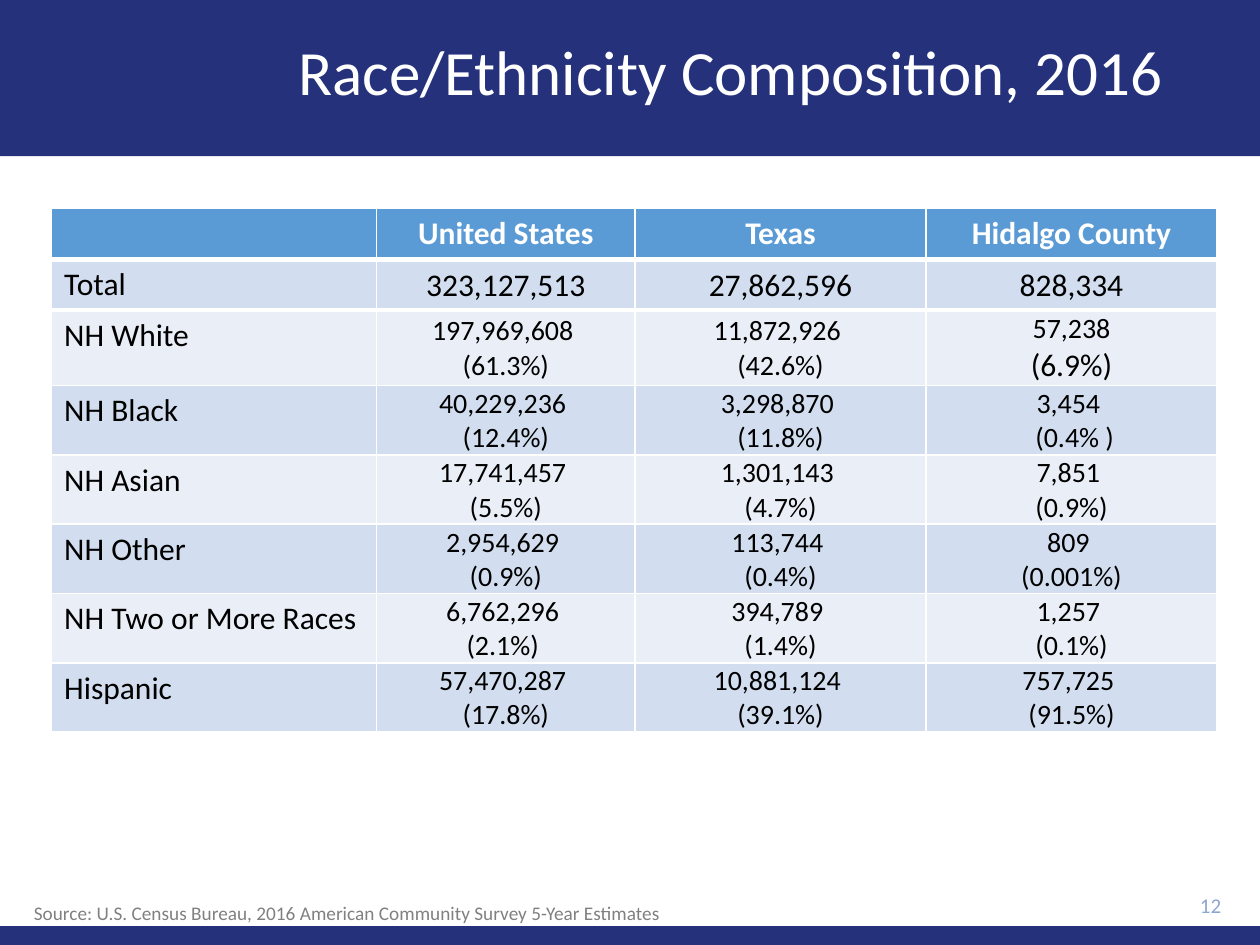
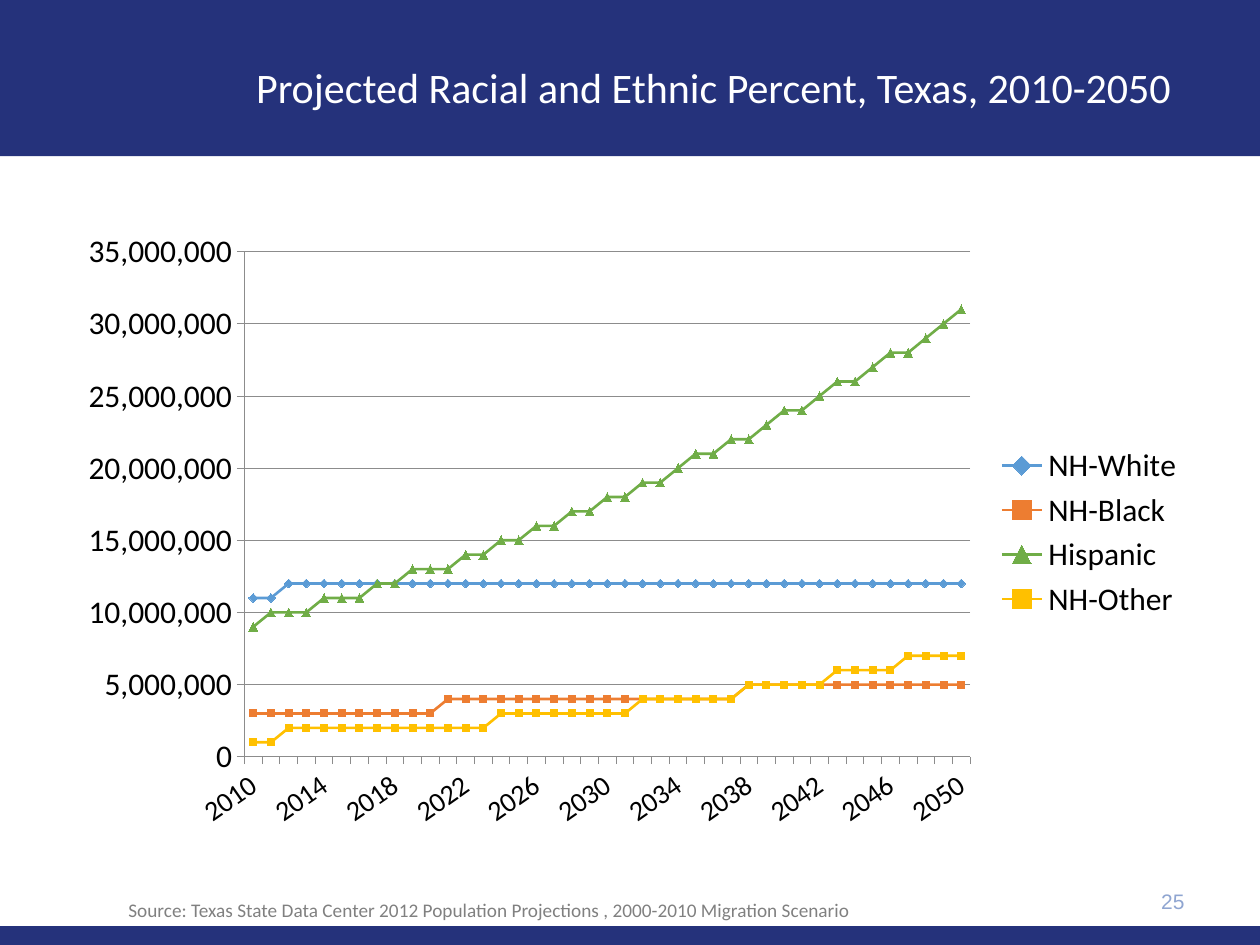
import lxml.etree
import pptx
import pptx.chart.data
import pptx.dml.color
import pptx.enum.chart
import pptx.enum.shapes
import pptx.enum.text
import pptx.oxml.ns
import pptx.util

Inches = pptx.util.Inches
Pt = pptx.util.Pt
qn = pptx.oxml.ns.qn
ALIGN = pptx.enum.text.PP_ALIGN
MIDDLE = pptx.enum.text.MSO_ANCHOR.MIDDLE
TOP = pptx.enum.text.MSO_ANCHOR.TOP
MARK = pptx.enum.chart.XL_MARKER_STYLE

THEME = {
    "navy": "25327B", "white": "FFFFFF", "black": "000000",
    "gray": "808080", "pale": "8FA5D1", "axis": "8C8C8C",
    "blue": "5B9BD5", "orange": "ED7D31", "green": "70AD47", "gold": "FFC000",
    "odd": "D2DEEF", "even": "EAEFF7",
    "font": "Calibri", "title": 36, "small title": 24, "body": 18,
    "figure": 16, "number": 12, "source": 11,
}


def style(font, size, color="black", **more):
    """Set size and colour by theme name, then any other font attributes."""
    values = {"name": THEME["font"], "size": Pt(THEME[size]), "bold": False, **more}
    for key, value in values.items():
        setattr(font, key, value)
    font.color.rgb = pptx.dml.color.RGBColor.from_string(THEME[color])


def label(slide, at, text, look, align=ALIGN.LEFT, anchor=MIDDLE, wrap=True):
    frame = slide.shapes.add_textbox(*map(Inches, at)).text_frame
    frame.word_wrap = wrap
    frame.vertical_anchor = anchor
    para = frame.paragraphs[0]
    para.text = text
    para.alignment = align
    style(para.runs[0].font, **look)
    return para


deck = pptx.Presentation()
deck.slide_width = Inches(10)
deck.slide_height = Inches(7.5)

# Bands, titles, page numbers and sources
BANDS = [(0, 0, 10, 1.24), (0, 7.35, 10, 0.15)]
PAGES = [
    {
        "title": ("Race/Ethnicity Composition, 2016", (1.7, 0.1, 8.2, 1), "title"),
        "number": ("12", (8.9, 7.01, 0.89, 0.34), "Calibri"),
        "source": (
            "Source: U.S. Census Bureau, 2016 American Community Survey 5-Year Estimates",
            (0.17, 7.1, 5.24, 0.29)),
    },
    {
        "title": ("Projected Racial and Ethnic Percent, Texas, 2010-2050",
                  (1.75, 0.17, 7.83, 1.08), "small title"),
        "number": ("25", (7.17, 6.95, 2.33, 0.4), "Arial"),
        "source": (
            "Source: Texas State Data Center 2012 Population Projections , "
            "2000-2010 Migration Scenario", (0.92, 7.08, 6.2, 0.29)),
    },
]
slides = []
for page in PAGES:
    slide = deck.slides.add_slide(deck.slide_layouts[6])
    slides.append(slide)
    for at in BANDS:
        band = slide.shapes.add_shape(
            pptx.enum.shapes.MSO_SHAPE.RECTANGLE, *map(Inches, at))
        band.shadow.inherit = False
        band.fill.solid()
        band.fill.fore_color.rgb = pptx.dml.color.RGBColor.from_string(THEME["navy"])
        band.line.fill.background()
    text, at, size = page["title"]
    look = {"size": size, "color": "white"}
    label(slide, at, text, look, ALIGN.CENTER).line_spacing = 0.9
    text, at, name = page["number"]
    look = {"size": "number", "color": "pale", "name": name}
    label(slide, at, text, look, ALIGN.RIGHT)
    text, at = page["source"]
    look = {"size": "source", "color": "gray"}
    label(slide, at, text, look, anchor=TOP, wrap=False)

# Race and ethnicity table
ROWS = [
    ("", "United States", "Texas", "Hidalgo County"),
    ("Total", "323,127,513", "27,862,596", "828,334"),
    ("NH White", "197,969,608 \n(61.3%)", "11,872,926 \n(42.6%)", "57,238\n(6.9%)"),
    ("NH Black", "40,229,236 \n(12.4%)", "3,298,870 \n(11.8%)", "3,454 \n (0.4% )"),
    ("NH Asian", "17,741,457 \n(5.5%)", "1,301,143 \n(4.7%)", "7,851 \n(0.9%)"),
    ("NH Other", "2,954,629 \n(0.9%)", "113,744 \n(0.4%)", "809 \n(0.001%)"),
    ("NH Two or More Races", "6,762,296 \n(2.1%) ", "394,789 \n(1.4%)",
     "1,257 \n(0.1%)"),
    ("Hispanic", "57,470,287 \n(17.8%)", "10,881,124 \n(39.1%)", "757,725 \n(91.5%)"),
]
WIDTHS = [2.58, 2.05, 2.31, 2.31]
HEIGHTS = [0.41, 0.4, 0.6] + [0.55] * 5
TIGHT = {"margin_left": Inches(0.01), "margin_right": Inches(0.01),
         "margin_top": Inches(0.01), "margin_bottom": 0, "vertical_anchor": MIDDLE}
table = slides[0].shapes.add_table(
    len(ROWS), len(WIDTHS), *map(Inches, (0.41, 1.65, 9.25, sum(HEIGHTS)))).table
for column, width in zip(table.columns, WIDTHS):
    column.width = Inches(width)
for r, row in enumerate(ROWS):
    table.rows[r].height = Inches(HEIGHTS[r])
    fill = "blue" if r == 0 else "odd" if r % 2 else "even"
    for c, text in enumerate(row):
        cell = table.cell(r, c)
        cell.fill.solid()
        cell.fill.fore_color.rgb = pptx.dml.color.RGBColor.from_string(THEME[fill])
        cell.text = text
        if r and c:
            for key, value in TIGHT.items():
                setattr(cell, key, value)
        if r < 2:
            # Thick rule between the header and the first row
            rule = lxml.etree.Element(qn("a:lnT" if r else "a:lnB"), w=str(Pt(3)))
            ink = lxml.etree.SubElement(rule, qn("a:solidFill"))
            lxml.etree.SubElement(ink, qn("a:srgbClr"), val=THEME["white"])
            cell._tc.get_or_add_tcPr().insert(0, rule)
        for para in cell.text_frame.paragraphs:
            para.alignment = ALIGN.CENTER if c else ALIGN.LEFT
            large = r < 2 or c == 0 or para.text == "(6.9%)"
            for run in para.runs:
                style(run.font, "body" if large else "figure",
                      "black" if r else "white", bold=r == 0)

# Projection chart, values in millions of people
UNIT = 1_000_000
SERIES = [
    ("NH-White", "blue", MARK.DIAMOND, 5, [11] * 2 + [12] * 39),
    ("NH-Black", "orange", MARK.SQUARE, 4, [3] * 11 + [4] * 17 + [5] * 13),
    ("Hispanic", "green", MARK.TRIANGLE, 5, [
        9, 10, 10, 10, 11, 11, 11, 12, 12, 13, 13, 13, 14, 14,
        15, 15, 16, 16, 17, 17, 18, 18, 19, 19, 20, 21, 21, 22,
        22, 23, 24, 24, 25, 26, 26, 27, 28, 28, 29, 30, 31]),
    ("NH-Other", "gold", MARK.SQUARE, 4,
     [1] * 2 + [2] * 12 + [3] * 8 + [4] * 6 + [5] * 5 + [6] * 4 + [7] * 4),
]
data = pptx.chart.data.CategoryChartData(number_format="#,##0")
data.categories = [str(year) for year in range(2010, 2051)]
for name, _, _, _, values in SERIES:
    data.add_series(name, [value * UNIT for value in values])
chart = slides[1].shapes.add_chart(
    pptx.enum.chart.XL_CHART_TYPE.LINE_MARKERS,
    *map(Inches, (0.5, 1.75, 9, 4.95)), data).chart
style(chart.font, "body")
chart.has_title = False
chart.has_legend = True
chart.legend.position = pptx.enum.chart.XL_LEGEND_POSITION.RIGHT
chart.legend.include_in_layout = False
style(chart.legend.font, "body")
chart.plots[0].vary_by_categories = False

for line, (_, color, mark, size, _) in zip(chart.plots[0].series, SERIES):
    tint = pptx.dml.color.RGBColor.from_string(THEME[color])
    line.smooth = False
    line.format.line.width = Pt(1.5)
    line.format.line.color.rgb = tint
    line.marker.style = mark
    line.marker.size = size
    line.marker.format.fill.solid()
    line.marker.format.fill.fore_color.rgb = tint
    line.marker.format.line.color.rgb = tint

years, people = chart.category_axis, chart.value_axis
limits = {"minimum_scale": 0, "maximum_scale": 35 * UNIT, "major_unit": 5 * UNIT,
          "has_major_gridlines": True}
for key, value in limits.items():
    setattr(people, key, value)
people.tick_labels.number_format = "#,##0"
people.tick_labels.number_format_is_linked = False
for axis, size in ((years, "figure"), (people, "body")):
    axis.major_tick_mark = pptx.enum.chart.XL_TICK_MARK.OUTSIDE
    style(axis.tick_labels.font, size)
for part in (years, people, people.major_gridlines):
    part.format.line.width = Pt(0.5)
    part.format.line.color.rgb = pptx.dml.color.RGBColor.from_string(THEME["axis"])

# Every fourth year, slanted
years._element.find(qn("c:txPr")).find(qn("a:bodyPr")).set("rot", str(-35 * 60000))
skip = lxml.etree.Element(qn("c:tickLblSkip"), val="4")
years._element.find(qn("c:noMultiLvlLbl")).addprevious(skip)

# Fixed plot area, as shares of the chart
area = chart._chartSpace.chart.plotArea
for old in area.findall(qn("c:layout")):
    area.remove(old)
layout = lxml.etree.Element(qn("c:layout"))
area.insert(0, layout)
manual = lxml.etree.SubElement(layout, qn("c:manualLayout"))
PLOT = {"layoutTarget": "inner", "xMode": "edge", "yMode": "edge",
        "x": 0.16, "y": 0.05, "w": 0.64, "h": 0.81}
for key, value in PLOT.items():
    lxml.etree.SubElement(manual, qn("c:" + key), val=str(value))

deck.save("out.pptx")
